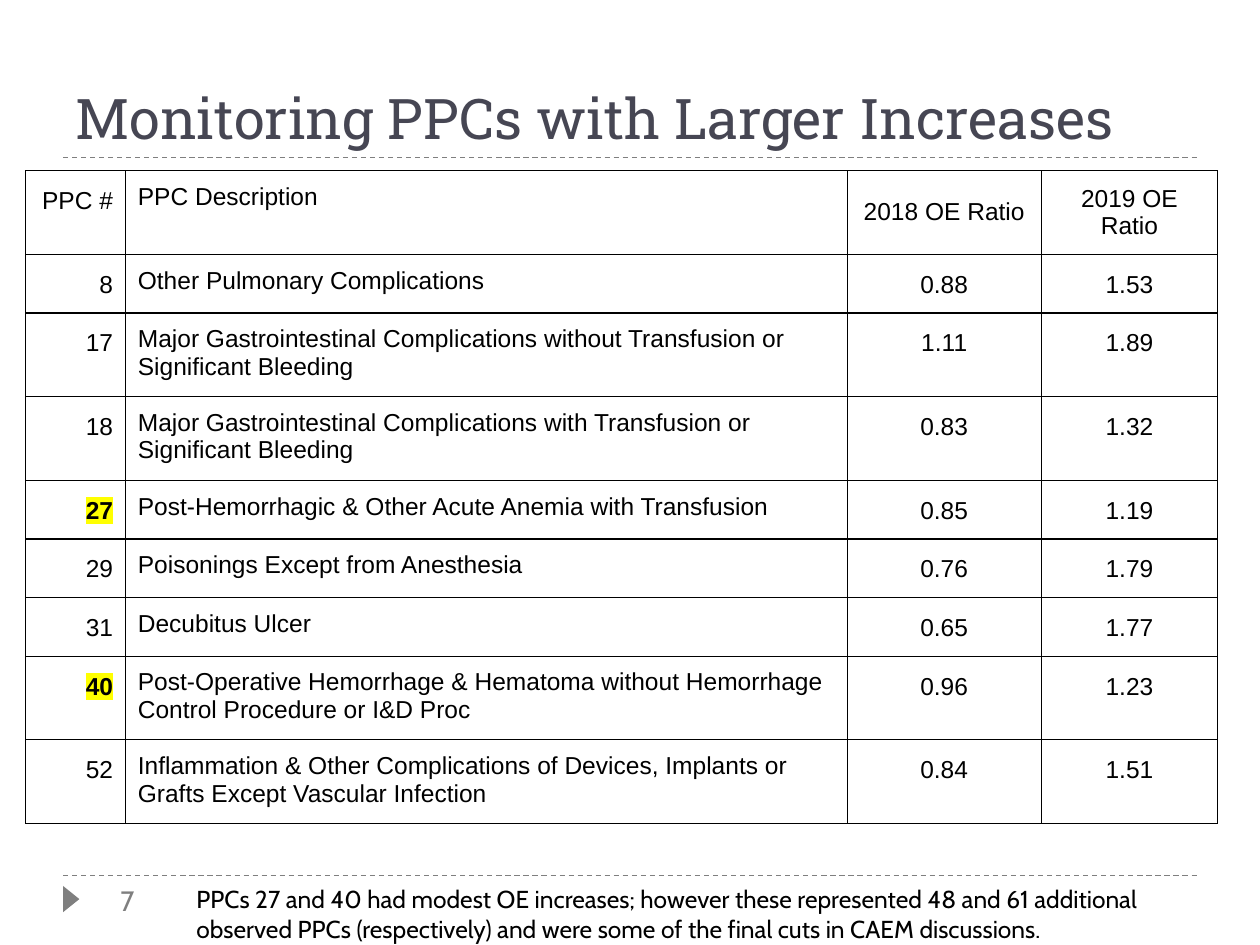
"""Build the slide on PPCs with larger increases in their OE ratio."""
from lxml import etree
from pptx import Presentation
from pptx.dml.color import RGBColor
from pptx.enum.dml import MSO_LINE
from pptx.enum.shapes import MSO_CONNECTOR, MSO_SHAPE
from pptx.enum.text import MSO_ANCHOR, PP_ALIGN
from pptx.oxml.ns import qn
from pptx.util import Cm, Pt

LEFT, CENTER, RIGHT = PP_ALIGN.LEFT, PP_ALIGN.CENTER, PP_ALIGN.RIGHT
TOP, MIDDLE, BOTTOM = MSO_ANCHOR.TOP, MSO_ANCHOR.MIDDLE, MSO_ANCHOR.BOTTOM
STRAIGHT, TRIANGLE, DASH = MSO_CONNECTOR.STRAIGHT, MSO_SHAPE.ISOSCELES_TRIANGLE, MSO_LINE.DASH

COLORS = {"title": "464653", "text": "000000", "muted": "7F7F7F",
          "paper": "FFFFFF", "highlight": "FFFF00"}

TITLE = "Monitoring PPCs with Larger Increases"
PAGE = "7"
NOTE = ("PPCs 27 and 40 had modest OE increases; however these represented 48 and 61 additional "
        "observed PPCs (respectively) and were some of the final cuts in CAEM discussions.")
HEADINGS = ("PPC #", "PPC Description", "2018 OE Ratio", "2019 OE Ratio")
PPCS = [
    ("8", "Other Pulmonary Complications", "0.88", "1.53"),
    ("17", "Major Gastrointestinal Complications without Transfusion or Significant Bleeding",
     "1.11", "1.89"),
    ("18", "Major Gastrointestinal Complications with Transfusion or Significant Bleeding",
     "0.83", "1.32"),
    ("27", "Post-Hemorrhagic & Other Acute Anemia with Transfusion", "0.85", "1.19"),
    ("29", "Poisonings Except from Anesthesia", "0.76", "1.79"),
    ("31", "Decubitus Ulcer", "0.65", "1.77"),
    ("40", "Post-Operative Hemorrhage & Hematoma without Hemorrhage Control Procedure or I&D Proc",
     "0.96", "1.23"),
    ("52", "Inflammation & Other Complications of Devices, Implants or Grafts "
     "Except Vascular Infection", "0.84", "1.51"),
]
HIGHLIGHTED = {"27", "40"}

COLUMN_WIDTHS = (2.01, 14.55, 3.91, 3.56)
COLUMN_ALIGNS = (RIGHT, LEFT, CENTER, CENTER)
ONE_LINE, TWO_LINES = 1.15, 1.61
LONGEST_LINE = 60
INSET = 0.25


def rgb(name):
    return RGBColor.from_string(COLORS[name])


def style_text(paragraph, font_name, size, color):
    for run in paragraph.runs:
        run.font.name = font_name
        run.font.size = Pt(size)
        run.font.color.rgb = rgb(color)


def add_text(slide, box, text, font_name, size, color, anchor=TOP, inset=0.13):
    frame = slide.shapes.add_textbox(*map(Cm, box)).text_frame
    frame.word_wrap = True
    frame.vertical_anchor = anchor
    frame.margin_top = frame.margin_bottom = Cm(inset)
    frame.text = text
    style_text(frame.paragraphs[0], font_name, size, color)


def add_rule(slide, y):
    rule = slide.shapes.add_connector(STRAIGHT, Cm(1.27), Cm(y), Cm(24.13), Cm(y))
    rule.line.color.rgb = rgb("muted")
    rule.line.width = Pt(0.75)
    rule.line.dash_style = DASH
    etree.SubElement(rule._element.spPr, qn("a:effectLst"))


def add_marker(slide):
    marker = slide.shapes.add_shape(TRIANGLE, Cm(1.17), Cm(17.96), Cm(0.53), Cm(0.33))
    marker.rotation = 90
    marker.shadow.inherit = False
    marker.fill.solid()
    marker.fill.fore_color.rgb = rgb("muted")
    marker.line.fill.background()


def add_borders(cell):
    properties = cell._tc.get_or_add_tcPr()
    for side in ("a:lnL", "a:lnR", "a:lnT", "a:lnB"):
        border = etree.SubElement(properties, qn(side), w=str(Pt(0.75)))
        fill = etree.SubElement(border, qn("a:solidFill"))
        etree.SubElement(fill, qn("a:srgbClr"), val=COLORS["text"])


def highlight(run):
    run.font.bold = True
    mark = etree.Element(qn("a:highlight"))
    etree.SubElement(mark, qn("a:srgbClr"), val=COLORS["highlight"])
    run._r.rPr.find(qn("a:solidFill")).addnext(mark)


def fill_cell(cell, text, align, is_ratio_heading, spaced):
    cell.margin_left = cell.margin_right = cell.margin_top = cell.margin_bottom = Cm(INSET)
    cell.vertical_anchor = MIDDLE if is_ratio_heading else TOP
    add_borders(cell)
    cell.fill.solid()
    cell.fill.fore_color.rgb = rgb("paper")
    cell.text_frame.text = text
    paragraph = cell.text_frame.paragraphs[0]
    paragraph.alignment = align
    if spaced:
        paragraph.line_spacing = 1.15
    style_text(paragraph, "Arial", 14, "text")
    if text in HIGHLIGHTED:
        highlight(paragraph.runs[0])


def add_ppc_table(slide):
    rows = [HEADINGS, *PPCS]
    heights = [TWO_LINES if row is HEADINGS or len(row[1]) > LONGEST_LINE else ONE_LINE
               for row in rows]
    table = slide.shapes.add_table(len(rows), len(HEADINGS), Cm(0.52), Cm(3.44),
                                   Cm(sum(COLUMN_WIDTHS)), Cm(sum(heights))).table
    table.first_row = table.horz_banding = False
    for column, width in zip(table.columns, COLUMN_WIDTHS):
        column.width = Cm(width)
    for r, (row, height) in enumerate(zip(rows, heights)):
        table.rows[r].height = Cm(height)
        for c, (text, align) in enumerate(zip(row, COLUMN_ALIGNS)):
            is_ratio_heading = row is HEADINGS and align == CENTER
            spaced = align != LEFT and not is_ratio_heading
            fill_cell(table.cell(r, c), text, align, is_ratio_heading, spaced)


def main():
    deck = Presentation()
    deck.slide_width, deck.slide_height = Cm(25.4), Cm(19.05)
    slide = deck.slides.add_slide(deck.slide_layouts[6])
    for y in (17.65, 3.17):
        add_rule(slide, y)
    add_marker(slide)
    add_text(slide, (2.18, 17.68, 1.19, 0.94), PAGE, "Cabin", 16, "muted")
    add_text(slide, (1.27, 0.43, 22.86, 2.74), TITLE, "Roboto Slab", 32, "title", BOTTOM)
    add_ppc_table(slide)
    add_text(slide, (3.71, 17.58, 20.83, 1.07), NOTE, "Cabin", 14, "text", inset=INSET)
    deck.save("out.pptx")


if __name__ == "__main__":
    main()
